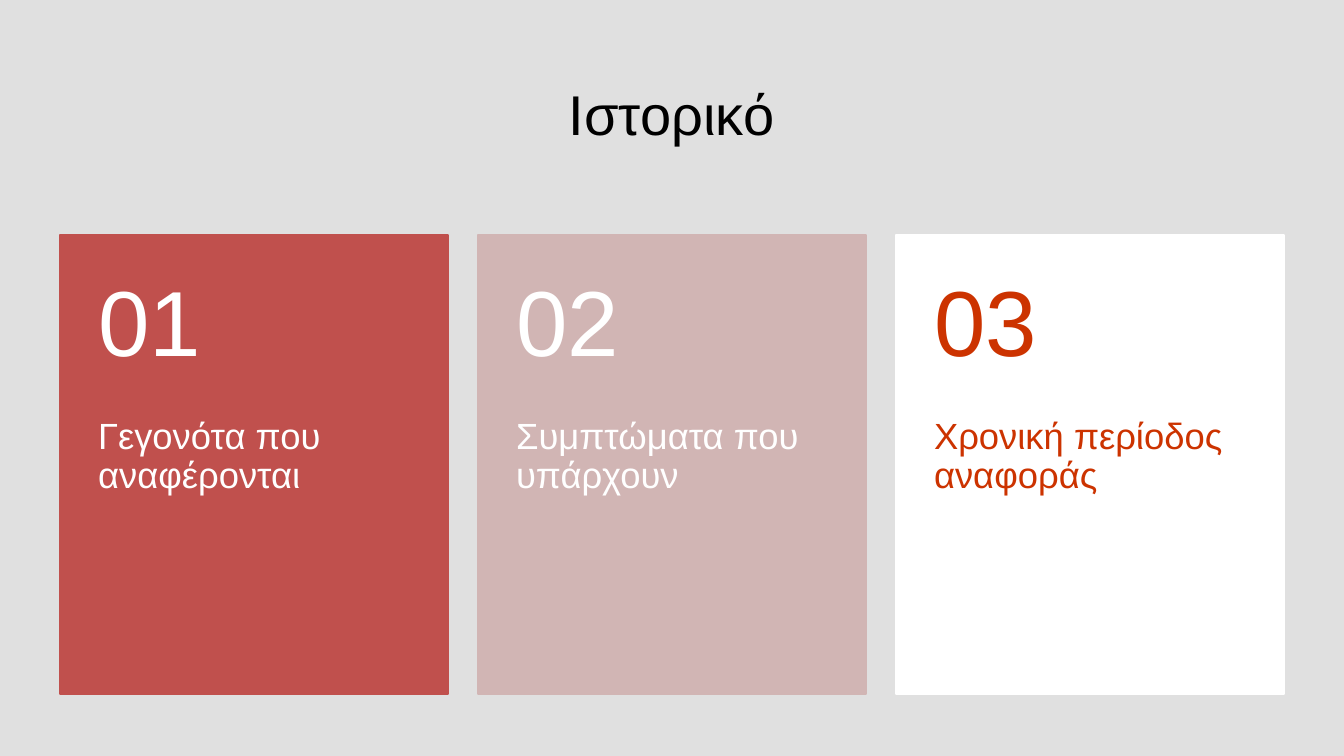
from lxml import etree
from pptx import Presentation
from pptx.dml.color import RGBColor
from pptx.enum.shapes import MSO_SHAPE
from pptx.enum.text import MSO_ANCHOR, PP_ALIGN
from pptx.oxml.ns import qn
from pptx.util import Emu, Pt

RECTANGLE = MSO_SHAPE.RECTANGLE
TOP, MIDDLE = MSO_ANCHOR.TOP, MSO_ANCHOR.MIDDLE
LEFT, CENTER = PP_ALIGN.LEFT, PP_ALIGN.CENTER

PX_PER_INCH = 100.8
SLIDE_BOX = (0, 0, 1344, 756)
TITLE_BOX = (60, 40, 1223, 146)
CARDS_BOX = (60, 235, 1224, 459)
CARD_GAP = 30
NUMBER_HEIGHT = 183
FONT = "Arial"
COLORS = {
    "base": "F2F2F2",
    "black": "000000",
    "white": "FFFFFF",
    "red": "C0504D",
    "rose": "D1B5B4",
    "rust": "CC3300",
}
CARDS = [
    ("01", "Γεγονότα που αναφέρονται", "red", "white"),
    ("02", "Συμπτώματα που υπάρχουν", "rose", "white"),
    ("03", "Χρονική περίοδος αναφοράς", "white", "rust"),
]


def px(length):
    return Emu(round(length * 914400 / PX_PER_INCH))


def rgb(name):
    return RGBColor.from_string(COLORS[name])


def add_panel(page, box, color, outlined=False, alpha=None):
    """Add a flat rectangle; alpha is its opacity in percent."""
    panel = page.shapes.add_shape(RECTANGLE, *map(px, box))
    panel.shadow.inherit = False
    panel.fill.solid()
    panel.fill.fore_color.rgb = rgb(color)
    if outlined:
        panel.line.color.rgb = rgb(color)
        panel.line.width = Pt(1)
    else:
        panel.line.fill.background()
    if alpha is not None:
        fill_color = panel.fill._xPr.find(qn("a:solidFill"))[0]
        etree.SubElement(fill_color, qn("a:alpha")).set("val", str(alpha * 1000))


def add_text(page, box, text, size, color, align=LEFT, anchor=TOP,
             insets=(0, 0, 0, 0), line_spacing=1.0):
    """Add a wrapped text box; insets are left, top, right, bottom."""
    text_box = page.shapes.add_textbox(*map(px, box))
    frame = text_box.text_frame
    frame.word_wrap = True
    frame.vertical_anchor = anchor
    (frame.margin_left, frame.margin_top,
     frame.margin_right, frame.margin_bottom) = map(px, insets)
    para = frame.paragraphs[0]
    para.alignment = align
    para.line_spacing = line_spacing
    span = para.add_run()
    span.text = text
    span.font.name = FONT
    span.font.size = Pt(size)
    span.font.color.rgb = rgb(color)


def add_background(page, box):
    add_panel(page, box, "base")
    add_panel(page, box, "black", alpha=7)


def add_card(page, box, number, label, fill, ink):
    left, top, width, height = box
    add_panel(page, box, fill, outlined=True)
    add_text(page, (left, top + NUMBER_HEIGHT, width, height - NUMBER_HEIGHT),
             label, 26, ink, insets=(38, 0, 38, 36), line_spacing=0.9)
    add_text(page, (left, top, width, NUMBER_HEIGHT), number, 66, ink,
             anchor=MIDDLE, insets=(38, 18, 38, 18), line_spacing=0.9)


def add_card_row(page, box):
    left, top, width, height = box
    card_width = (width - CARD_GAP * (len(CARDS) - 1)) // len(CARDS)
    for index, card in enumerate(CARDS):
        card_left = left + index * (card_width + CARD_GAP)
        add_card(page, (card_left, top, card_width, height), *card)


def main():
    deck = Presentation()
    deck.slide_width, deck.slide_height = map(px, SLIDE_BOX[2:])
    page = deck.slides.add_slide(deck.slide_layouts[6])
    add_background(page, SLIDE_BOX)
    add_text(page, TITLE_BOX, "Ιστορικό", 40, "black", align=CENTER, anchor=MIDDLE)
    add_card_row(page, CARDS_BOX)
    deck.save("out.pptx")


if __name__ == "__main__":
    main()
